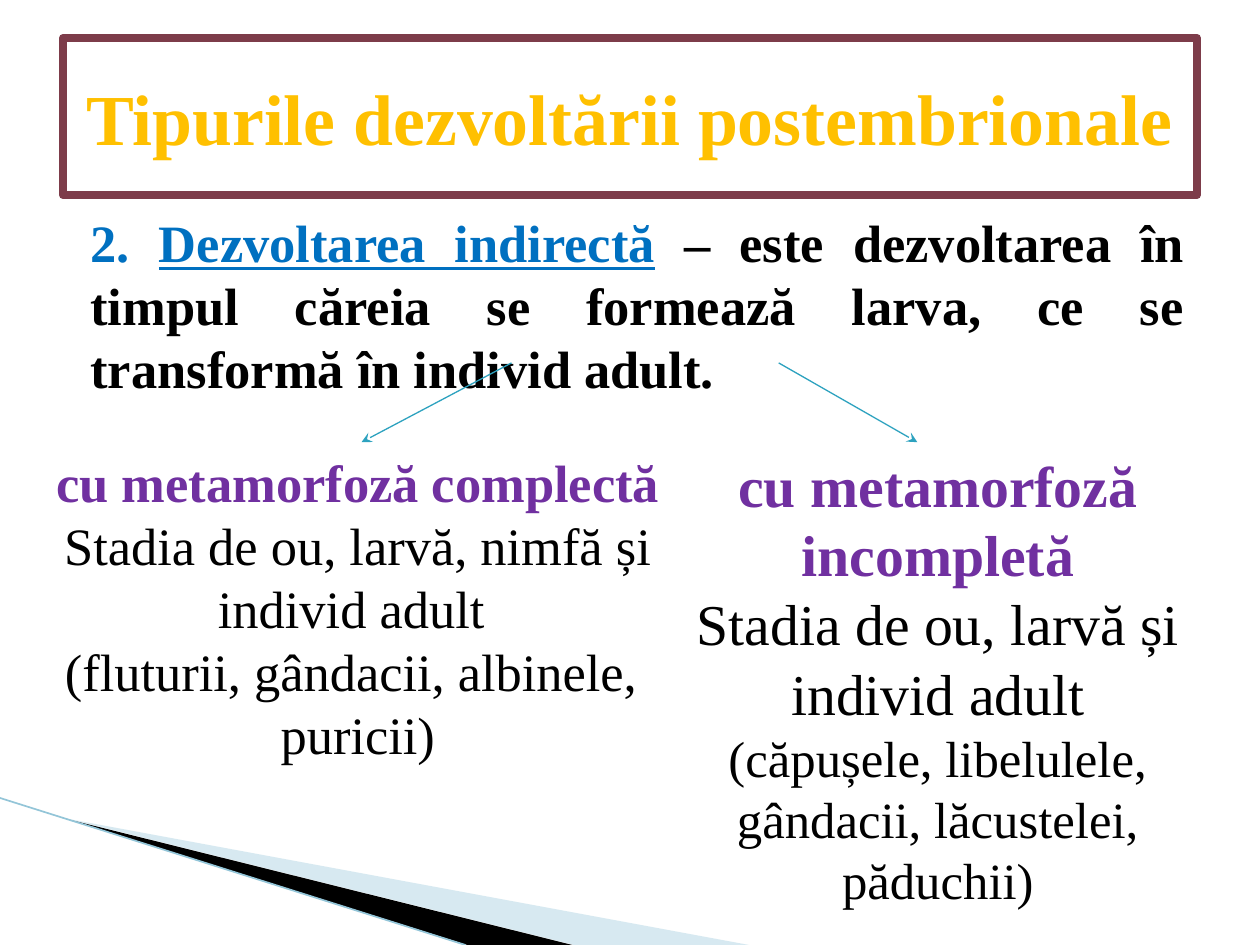
from dataclasses import dataclass

from lxml.etree import SubElement
from pptx import Presentation
from pptx.dml.color import RGBColor
from pptx.enum.shapes import MSO_CONNECTOR as Connector
from pptx.enum.text import MSO_ANCHOR as Anchor, PP_ALIGN as Align
from pptx.oxml.ns import qn
from pptx.util import Pt


@dataclass(frozen=True)
class Theme:
    font: str = "Times New Roman"
    gold: str = "FFC000"
    frame: str = "7D3C4A"
    blue: str = "0070C0"
    purple: str = "7030A0"
    teal: str = "2DA2BF"
    black: str = "000000"
    white: str = "FFFFFF"
    pale: str = "9CCADC"
    edge: str = "93C5D8"
    title_size: float = 41
    text_size: float = 30
    large_size: float = 33
    small_size: float = 29


THEME = Theme()


def rgb(value):
    return RGBColor.from_string(value)


def add_span(para, text, size=THEME.text_size, color=THEME.black,
             bold=False, underline=False):
    span = para.add_run()
    span.text = text
    font = span.font
    font.name, font.size = THEME.font, Pt(size)
    font.bold, font.underline = bold, underline
    font.color.rgb = rgb(color)


def add_text(page, box, paras, align=Align.CENTER, indent=0):
    """Place paragraphs, each a list of (text, format) pairs, in a box."""
    frame = page.shapes.add_textbox(*map(Pt, box)).text_frame
    frame.word_wrap = True
    for index, spans in enumerate(paras):
        para = frame.paragraphs[0] if index == 0 else frame.add_paragraph()
        para.alignment = align
        if indent:
            para._p.get_or_add_pPr().set("marL", str(Pt(indent)))
        for text, style in spans:
            add_span(para, text, **style)


def add_line(page, start, end, color, width, arrow=False):
    line = page.shapes.add_connector(
        Connector.STRAIGHT, *map(Pt, (*start, *end)))
    line.line.color.rgb = rgb(color)
    line.line.width = Pt(width)
    SubElement(line._element.spPr, qn("a:effectLst"))
    if arrow:
        SubElement(line.line._get_or_add_ln(), qn("a:tailEnd"), type="stealth")


def add_wedge(page, points, color, alpha=None):
    builder = page.shapes.build_freeform(*points[0], scale=Pt(1))
    builder.add_line_segments(points[1:], close=True)
    wedge = builder.convert_to_shape()
    wedge.shadow.inherit = False
    wedge.fill.solid()
    wedge.fill.fore_color.rgb = rgb(color)
    wedge.line.fill.background()
    if alpha is not None:
        tint = wedge._element.spPr.find(".//" + qn("a:srgbClr"))
        SubElement(tint, qn("a:alpha"), val=str(alpha * 1000))


def add_corner(page, box):
    """Layered wedges running from the left edge to the bottom edge."""
    left, top, width, height = box
    bottom = top + height
    tip = (left + 39, top + 12.5)
    add_wedge(page, [tip, (left + 428, bottom), (left + 328, bottom)],
              THEME.pale, alpha=40)
    add_wedge(page, [(left + 38, top + 11.5), (left + 327, bottom),
                     (left + 267, bottom)], THEME.black)
    add_line(page, (left, top), (left + width, bottom), THEME.edge, 0.95)


def add_title(page, box):
    title = page.shapes.title
    title.left, title.top, title.width, title.height = map(Pt, box)
    title.fill.solid()
    title.fill.fore_color.rgb = rgb(THEME.white)
    title.line.color.rgb = rgb(THEME.frame)
    title.line.width = Pt(4.33)
    title.text_frame.vertical_anchor = Anchor.MIDDLE
    para = title.text_frame.paragraphs[0]
    para.alignment = Align.CENTER
    add_span(para, "Tipurile dezvoltării postembrionale",
             size=THEME.title_size, color=THEME.gold, bold=True)


def add_definition(page, box):
    number = dict(color=THEME.blue, bold=True)
    add_text(page, box, [[
        ("2. ", number),
        ("Dezvoltarea indirectă", dict(number, underline=True)),
        (" ", number),
        ("– este dezvoltarea în timpul căreia se formează larva, "
         "ce se transformă în individ adult.", dict(bold=True)),
    ]], align=Align.JUSTIFY, indent=8.64)


def add_branch(page, box, heading, stages, examples, size, example_size):
    """One kind of metamorphosis: heading, stages and example animals."""
    paras = [[(heading, dict(size=size, color=THEME.purple, bold=True))],
             [(stages, dict(size=size))]]
    paras += [[(line, dict(size=example_size))] for line in examples]
    add_text(page, box, paras)


def main():
    deck = Presentation()
    deck.slide_width, deck.slide_height = Pt(720), Pt(540)
    page = deck.slides.add_slide(deck.slide_layouts[5])

    # Corner decoration
    add_corner(page, (0, 456, 266, 84))

    # Title and definition
    add_title(page, (36, 21.6, 648, 90))
    add_definition(page, (36, 116.6, 648, 147.6))

    # Arrows to the two branches
    for start_x, end_x in ((292.3, 206.6), (445, 524.2)):
        add_line(page, (start_x, 207.4), (end_x, 252.7), THEME.teal, 0.75,
                 arrow=True)

    # Branches
    add_branch(page, (14.4, 253.4, 380.2, 189.4),
               "cu metamorfoză complectă",
               "Stadia de ou, larvă, nimfă și individ adult ",
               ["(fluturii, gândacii, albinele, ", "puricii)"],
               THEME.text_size, THEME.text_size)
    add_branch(page, (371.5, 253.4, 329, 272.9),
               "cu metamorfoză incompletă",
               "Stadia de ou, larvă și individ adult",
               ["(căpușele, libelulele, gândacii, lăcustelei, păduchii)"],
               THEME.large_size, THEME.small_size)

    deck.save("out.pptx")


if __name__ == "__main__":
    main()
